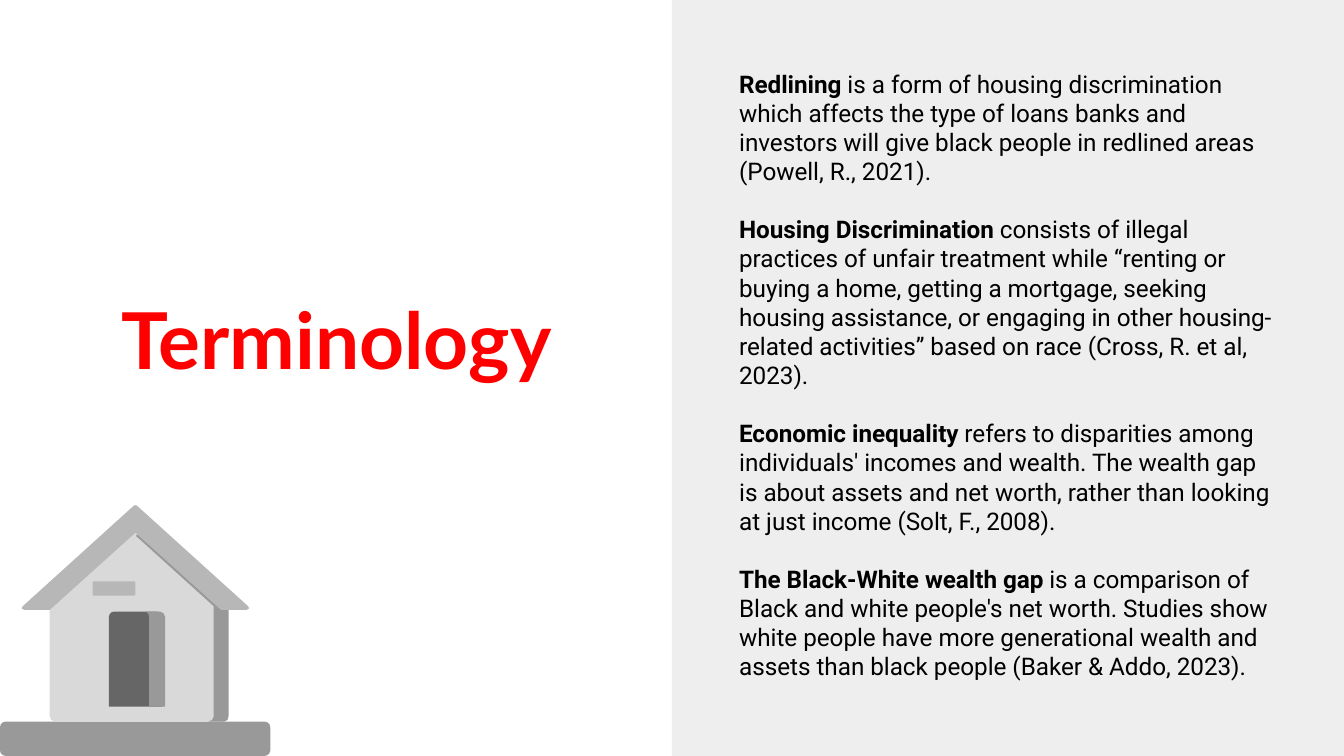
from pptx import Presentation
from pptx.dml.color import RGBColor
from pptx.enum.shapes import MSO_SHAPE
from pptx.enum.text import MSO_ANCHOR, PP_ALIGN
from pptx.util import Cm, Pt

RECT = MSO_SHAPE.RECTANGLE
ROUND = MSO_SHAPE.ROUNDED_RECTANGLE
ROUND_TOP = MSO_SHAPE.ROUND_2_SAME_RECTANGLE
BOTTOM, MIDDLE = MSO_ANCHOR.BOTTOM, MSO_ANCHOR.MIDDLE
LEFT, CENTER = PP_ALIGN.LEFT, PP_ALIGN.CENTER

WIDTH, HEIGHT = 25.4, 14.29
COLORS = {
    "title": "FF0000", "text": "000000", "panel": "EEEEEE",
    "wall": "D9D9D9", "shade": "999999", "roof": "B7B7B7", "door": "666666",
}

TITLE = "Terminology"
TERMS = [
    ("Redlining",
     " is a form of housing discrimination which affects the type of loans banks "
     "and investors will give black people in redlined areas (Powell, R., 2021)."),
    ("Housing Discrimination",
     " consists of illegal practices of unfair treatment while “renting or buying "
     "a home, getting a mortgage, seeking housing assistance, or engaging in other "
     "housing-related activities” based on race (Cross, R. et al, 2023)."),
    ("Economic inequality",
     " refers to disparities among individuals' incomes and wealth. The wealth gap "
     "is about assets and net worth, rather than looking at just income "
     "(Solt, F., 2008)."),
    ("The Black-White wealth gap",
     " is a comparison of Black and white people's net worth. Studies show white "
     "people have more generational wealth and assets than black people "
     "(Baker & Addo, 2023)."),
]

# House outlines in cm; the walls and roof are given as left halves.
HOUSE_AXIS = 2.56
WALL_HALF = [(2.56, 10.01), (0.94, 11.46), (0.94, 13.54), (0.97, 13.61), (1.04, 13.64)]
ROOF_HALF = [(2.56, 10.07), (0.94, 11.53), (0.46, 11.53), (0.41, 11.5),
             (0.43, 11.46), (2.53, 9.56), (2.56, 9.55)]
SIDE_WALL = [(2.72, 10.01), (2.57, 10.13), (4.04, 11.46), (4.04, 13.54), (4.01, 13.61),
             (3.94, 13.64), (4.24, 13.64), (4.3, 13.61), (4.32, 13.54), (4.32, 11.46)]
DOOR_SIDE = [(2.74, 11.56), (2.8, 11.59), (2.82, 11.66), (2.82, 13.36),
             (3.12, 13.36), (3.12, 11.66), (3.09, 11.59), (3.02, 11.56)]


def paint(shape, color):
    shape.fill.solid()
    shape.fill.fore_color.rgb = RGBColor.from_string(COLORS[color])
    shape.line.fill.background()
    shape.shadow.inherit = False


def add_block(shapes, kind, box, color, corner=None):
    s = shapes.add_shape(kind, *map(Cm, box))
    if corner is not None:
        s.adjustments[0] = corner
    paint(s, color)


def add_outline(shapes, points, color):
    pts = [(Cm(x), Cm(y)) for x, y in points]
    builder = shapes.build_freeform(*pts[0])
    builder.add_line_segments(pts[1:])
    paint(builder.convert_to_shape(), color)


def mirrored(half):
    """Close a left half outline with its reflection in the house axis."""
    return half + [(round(2 * HOUSE_AXIS - x, 2), y) for x, y in reversed(half)]


def place(s, box, anchor):
    s.left, s.top, s.width, s.height = map(Cm, box)
    tf = s.text_frame
    tf.word_wrap = True
    tf.vertical_anchor = anchor
    tf.margin_left = tf.margin_right = tf.margin_top = tf.margin_bottom = Cm(0.25)
    return tf


def add_text(p, text, font="Roboto", size=13, color="text", bold=False, align=LEFT):
    p.alignment = align
    r = p.add_run()
    r.text = text
    r.font.name, r.font.size, r.font.bold = font, Pt(size), bold
    r.font.color.rgb = RGBColor.from_string(COLORS[color])


def add_house(shapes):
    add_block(shapes, ROUND, (0, 13.64, 5.11, 0.65), "shade", 0.17)
    house = shapes.add_group_shape().shapes
    add_outline(house, mirrored(WALL_HALF), "wall")
    add_outline(house, SIDE_WALL, "shade")
    add_block(house, ROUND, (1.75, 10.99, 0.81, 0.27), "roof", 0.1)
    add_block(house, ROUND_TOP, (2.06, 11.56, 1, 1.8), "door", 0.1)
    add_outline(house, DOOR_SIDE, "shade")
    add_outline(house, mirrored(ROOF_HALF), "roof")


def main():
    prs = Presentation()
    prs.slide_width, prs.slide_height = Cm(WIDTH), Cm(HEIGHT)
    slide = prs.slides.add_slide(prs.slide_layouts[5])
    shapes = slide.shapes

    add_block(shapes, RECT, (WIDTH / 2, 0, WIDTH / 2, HEIGHT), "panel")

    tf = place(shapes.title, (0.74, 3.43, 11.23, 4.11), BOTTOM)
    add_text(tf.paragraphs[0], TITLE, font="Lato", size=42, color="title",
             bold=True, align=CENTER)

    body = shapes.add_textbox(0, 0, 0, 0)
    tf = place(body, (13.72, 0.86, 10.67, 12.45), MIDDLE)
    for i, (term, definition) in enumerate(TERMS):
        p = tf.add_paragraph() if i else tf.paragraphs[0]
        p.space_before = Pt(15.6 if i else 0)
        add_text(p, term, bold=True)
        add_text(p, definition)

    add_house(shapes)
    prs.save("out.pptx")


if __name__ == "__main__":
    main()
